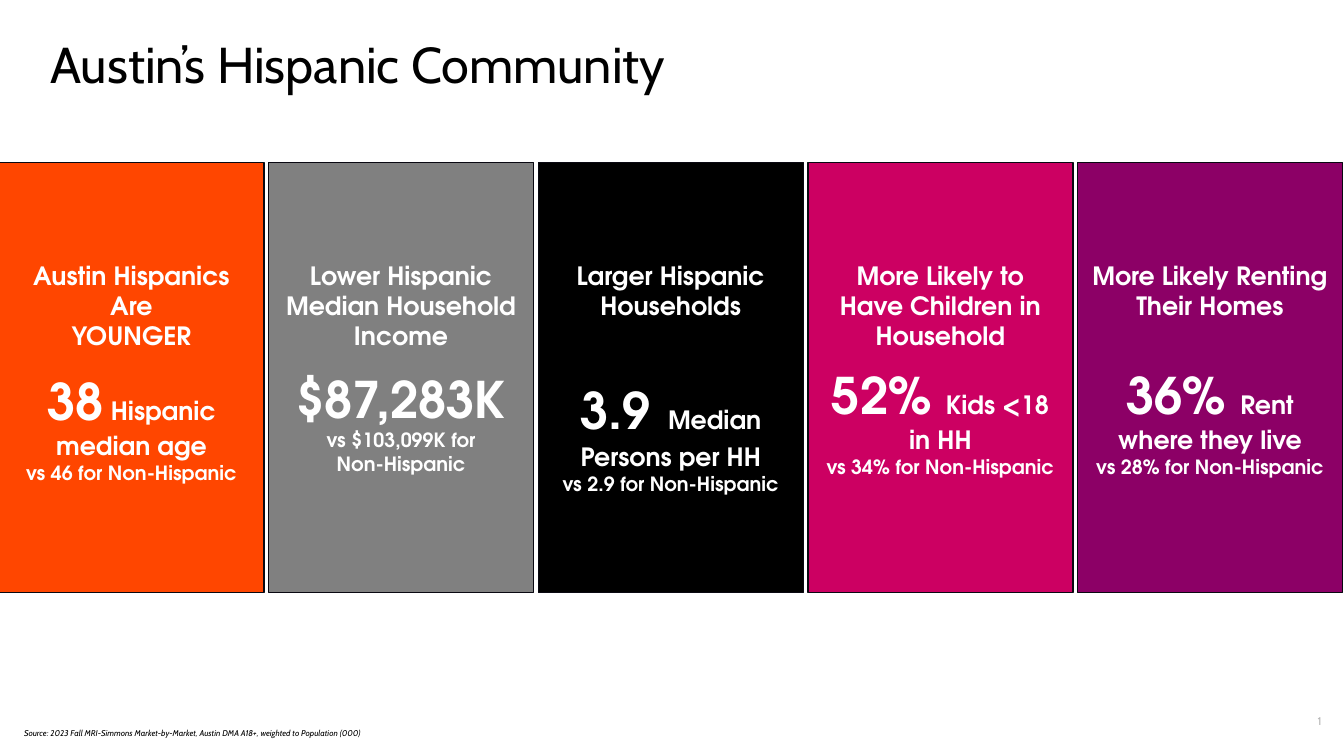
"""Build the slide on Austin's Hispanic community."""
from dataclasses import dataclass

import pptx
import pptx.dml.color
import pptx.enum.shapes
import pptx.enum.text
import pptx.util

Pt = pptx.util.Pt
RGBColor = pptx.dml.color.RGBColor
Align = pptx.enum.text.PP_ALIGN
Anchor = pptx.enum.text.MSO_ANCHOR

BLACK = RGBColor(0x00, 0x00, 0x00)
WHITE = RGBColor(0xFF, 0xFF, 0xFF)
EDGE = RGBColor(0x09, 0x08, 0x11)
PALE = RGBColor(0xB5, 0xB5, 0xB5)
ORANGE = RGBColor(0xFF, 0x46, 0x00)
GRAY = RGBColor(0x80, 0x80, 0x80)
PINK = RGBColor(0xCC, 0x00, 0x62)
PURPLE = RGBColor(0x8C, 0x00, 0x66)

BODY_FONT = "Cabin"
CARD_FONT = "TeX Gyre Adventor"
CARD_LEFT, CARD_TOP, CARD_PITCH = -0.72, 115.92, 192.6
CARD_WIDTH, CARD_HEIGHT = 189.36, 307.44
HEADING_INSET, HEADING_TOP, HEADING_WIDTH = 3.5, 182.16, 182.16
BIG, MEDIUM, SMALL = 36, 18, 14


@dataclass(frozen=True)
class Span:
    text: str
    size: float
    font: str = CARD_FONT
    color: RGBColor = WHITE
    bold: bool = False
    italic: bool = False


@dataclass(frozen=True)
class Card:
    fill: RGBColor
    heading: list[str]
    heading_height: float
    figure: list[list[tuple[str, float]]]
    figure_top: float
    figure_width: float
    figure_height: float


CARDS = [
    Card(ORANGE, ["Austin Hispanics Are", "YOUNGER"], 72.72,
         [[("38", BIG), (" Hispanic median age", MEDIUM)],
          [("vs 46 for Non-Hispanic", SMALL)]], 260.64, 170.64, 90),
    Card(GRAY, ["Lower Hispanic Median Household Income"], 51.12,
         [[("$87,283K", BIG)], [("vs $103,099K for", SMALL)],
          [("Non-Hispanic", SMALL)]], 259.2, 176.4, 84.96),
    Card(BLACK, ["Larger Hispanic Households"], 51.12,
         [[("3.9", BIG), (" ", 44), ("Median Persons per HH", MEDIUM)],
          [("vs 2.9 for Non-Hispanic", SMALL)]], 259.2, CARD_WIDTH, 99.36),
    Card(PINK, ["More Likely to Have Children in Household"], 51.12,
         [[("52% ", BIG), ("Kids <18", MEDIUM)], [("in HH", MEDIUM)],
          [("vs 34% for Non-Hispanic", SMALL)]], 256.32, CARD_WIDTH, 84.96),
    Card(PURPLE, ["More Likely Renting Their Homes"], 72.72,
         [[("36% ", BIG), ("Rent where they live", MEDIUM)],
          [("vs 28% for Non-Hispanic", SMALL)]], 256.32, CARD_WIDTH, 90),
]


def add_text(shapes, left: float, top: float, width: float, height: float,
             lines: list[list[Span]], align: Align = Align.LEFT,
             anchor: Anchor = Anchor.TOP, padded: bool = True) -> None:
    """Add a wrapping text box with one paragraph per line of spans."""
    box = shapes.add_textbox(Pt(left), Pt(top), Pt(width), Pt(height))
    frame = box.text_frame
    frame.word_wrap = True
    frame.auto_size = pptx.enum.text.MSO_AUTO_SIZE.NONE
    frame.vertical_anchor = anchor
    if not padded:
        frame.margin_left = frame.margin_right = Pt(0)
        frame.margin_top = frame.margin_bottom = Pt(0)
    for index, line in enumerate(lines):
        para = frame.add_paragraph() if index else frame.paragraphs[0]
        para.alignment = align
        for span in line:
            run = para.add_run()
            run.text = span.text
            run.font.size = Pt(span.size)
            run.font.name = span.font
            run.font.color.rgb = span.color
            run.font.bold = span.bold
            run.font.italic = span.italic


def add_card(page: pptx.slide.Slide, card: Card, left: float) -> None:
    """Add one grouped panel with its heading and figure."""
    shapes = page.shapes.add_group_shape().shapes
    panel = shapes.add_shape(pptx.enum.shapes.MSO_SHAPE.RECTANGLE, Pt(left),
                             Pt(CARD_TOP), Pt(CARD_WIDTH), Pt(CARD_HEIGHT))
    panel.shadow.inherit = False
    panel.fill.solid()
    panel.fill.fore_color.rgb = card.fill
    panel.line.color.rgb = EDGE
    panel.line.width = Pt(1)
    heading = [[Span(text, MEDIUM, bold=True)] for text in card.heading]
    figure = [[Span(text, size, bold=True) for text, size in line]
              for line in card.figure]
    add_text(shapes, left + HEADING_INSET, HEADING_TOP, HEADING_WIDTH,
             card.heading_height, heading, Align.CENTER)
    add_text(shapes, left + (CARD_WIDTH - card.figure_width) / 2,
             card.figure_top, card.figure_width, card.figure_height,
             figure, Align.CENTER)


def main() -> None:
    """Build and save the deck."""
    deck = pptx.Presentation()
    deck.slide_width, deck.slide_height = Pt(960), Pt(540)
    page = deck.slides.add_slide(deck.slide_layouts[6])
    add_text(page.shapes, 887.76, 505.44, 63.36, 19.44,
             [[Span("1", 8, BODY_FONT, PALE)]], Align.RIGHT, Anchor.MIDDLE)
    add_text(page.shapes, 36, 23.76, 864, 43.92,
             [[Span("Austin’s Hispanic Community", 36, BODY_FONT, BLACK)]],
             padded=False)
    for index, card in enumerate(CARDS):
        add_card(page, card, CARD_LEFT + index * CARD_PITCH)
    source = ("Source: 2023 Fall MRI-Simmons Market-by-Market, "
              "Austin DMA A18+, weighted to Population (000)")
    add_text(page.shapes, 10.08, 516.24, 449.28, 14.4,
             [[Span(source, 6, BODY_FONT, BLACK, italic=True)]])
    deck.save("out.pptx")


if __name__ == "__main__":
    main()
